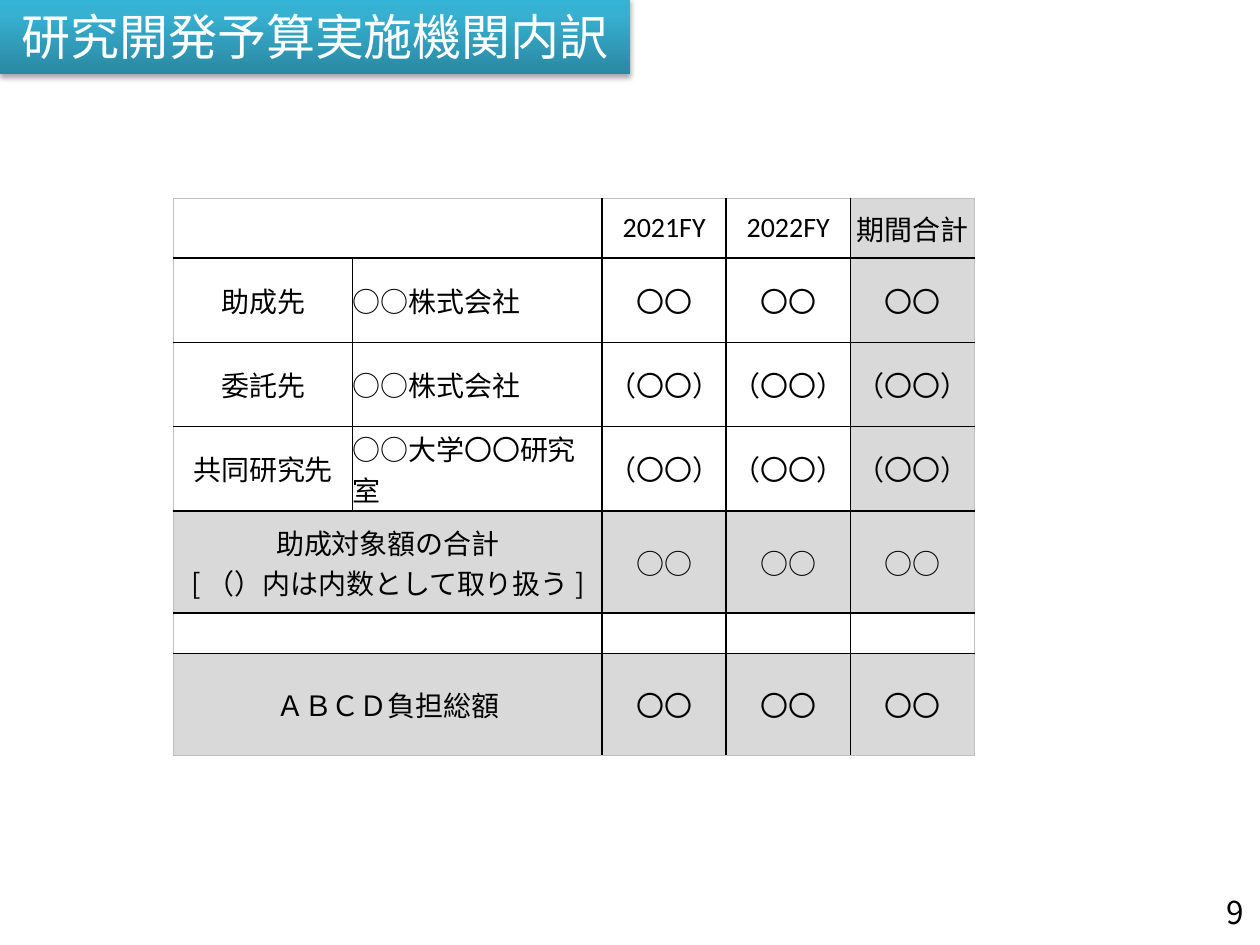
from lxml import etree
from pptx import Presentation
from pptx.dml.color import RGBColor
from pptx.enum.text import MSO_ANCHOR, PP_ALIGN
from pptx.oxml import parse_xml
from pptx.oxml.ns import nsdecls, qn
from pptx.util import Cm, Pt

CENTER, LEFT, RIGHT = PP_ALIGN.CENTER, PP_ALIGN.LEFT, PP_ALIGN.RIGHT
MIDDLE = MSO_ANCHOR.MIDDLE
LATIN, JAPANESE = "Calibri", "Noto Sans CJK JP"
COLORS = {"text": "000000", "title": "FFFFFF", "plain": "FFFFFF", "total": "D9D9D9",
          "grid": "000000", "frame": "BFBFBF",
          "bottom": "2A88A2", "middle": "37B1D2", "top": "34B4D6"}


def style(para, size, font, color, align):
    para.alignment = align
    para.font.size = Pt(size)
    para.font.name = font
    para.font.bold = False
    para.font.color.rgb = RGBColor.from_string(COLORS[color])


def add_border(cell, side, color):
    line = etree.SubElement(cell._tc.get_or_add_tcPr(), qn(f"a:{side}"), w=str(Pt(1)))
    fill = etree.SubElement(line, qn("a:solidFill"))
    etree.SubElement(fill, qn("a:srgbClr"), val=COLORS[color])


deck = Presentation()
deck.slide_width, deck.slide_height = Cm(25.4), Cm(19.05)
page = deck.slides.add_slide(deck.slide_layouts[5])

# Title banner with gradient and shadow
title = page.shapes.title
title.left, title.top, title.width, title.height = Cm(0), Cm(-0.05), Cm(12.7), Cm(1.55)
title.text_frame.text = "研究開発予算実施機関内訳"
title.text_frame.vertical_anchor = MIDDLE
style(title.text_frame.paragraphs[0], 28, LATIN, "title", CENTER)
stops = "".join(f'<a:gs pos="{place * 1000}"><a:srgbClr val="{COLORS[name]}"/></a:gs>'
                for place, name in ((0, "bottom"), (80, "middle"), (100, "top")))
title._element.spPr.append(parse_xml(
    f'<a:gradFill {nsdecls("a")} rotWithShape="1"><a:gsLst>{stops}</a:gsLst>'
    '<a:lin ang="16200000" scaled="0"/></a:gradFill>'))
title._element.spPr.append(parse_xml(
    f'<a:effectLst {nsdecls("a")}><a:outerShdw blurRad="{Pt(3.1)}" dist="{Pt(1.8)}" '
    'dir="5400000" rotWithShape="0"><a:srgbClr val="000000"><a:alpha val="35000"/>'
    '</a:srgbClr></a:outerShdw></a:effectLst>'))

# Budget table
rows = [
    ["", "", "2021FY", "2022FY", "期間合計"],
    ["助成先", "○○株式会社"] + ["〇〇"] * 3,
    ["委託先", "○○株式会社"] + ["（〇〇）"] * 3,
    ["共同研究先", "○○大学〇〇研究室"] + ["（〇〇）"] * 3,
    ["助成対象額の合計\n[ （）内は内数として取り扱う ]", ""] + ["○○"] * 3,
    [""] * 5,
    ["ＡＢＣＤ負担総額", ""] + ["〇〇"] * 3,
]
widths = [3.61, 5.03, 2.5, 2.5, 2.5]
heights = [1.2, 1.7, 1.7, 1.7, 2.06, 0.53, 2.06]
merged_rows, total_rows, blank_row = (0, 4, 5, 6), (4, 6), 5
last_row, last_col = len(rows) - 1, len(widths) - 1

table = page.shapes.add_table(len(rows), len(widths), Cm(3.5), Cm(4),
                              Cm(sum(widths)), Cm(sum(heights))).table
table.first_row = table.horz_banding = False
for column, width in zip(table.columns, widths):
    column.width = Cm(width)
for row, height in zip(table.rows, heights):
    row.height = Cm(height)
for r in merged_rows:
    table.cell(r, 0).merge(table.cell(r, 1))

for r, texts in enumerate(rows):
    for c, text in enumerate(texts):
        cell = table.cell(r, c)
        cell.text = text
        cell.vertical_anchor = MIDDLE
        cell.margin_left = cell.margin_right = cell.margin_top = cell.margin_bottom = 0
        font = LATIN if text.endswith("FY") else JAPANESE
        for para in cell.text_frame.paragraphs:
            style(para, 16, font, "text", LEFT if c == 1 else CENTER)
        # Grey outer frame, black inner grid
        for side, outer in (("lnL", c == 0), ("lnR", c == last_col),
                            ("lnT", r == 0), ("lnB", r == last_row)):
            if not (r in merged_rows and (c, side) in ((0, "lnR"), (1, "lnL"))):
                add_border(cell, side, "frame" if outer else "grid")
        shaded = r in total_rows or (c == last_col and r != blank_row)
        cell.fill.solid()
        cell.fill.fore_color.rgb = RGBColor.from_string(COLORS["total" if shaded else "plain"])

# Page number
box = page.shapes.add_textbox(Cm(23.6), Cm(18.06), Cm(1.47), Cm(0.64))
frame = box.text_frame
frame.margin_left = frame.margin_right = frame.margin_top = frame.margin_bottom = 0
frame.word_wrap = False
frame.vertical_anchor = MIDDLE
frame.text = "9"
style(frame.paragraphs[0], 18, JAPANESE, "text", RIGHT)

deck.save("out.pptx")
